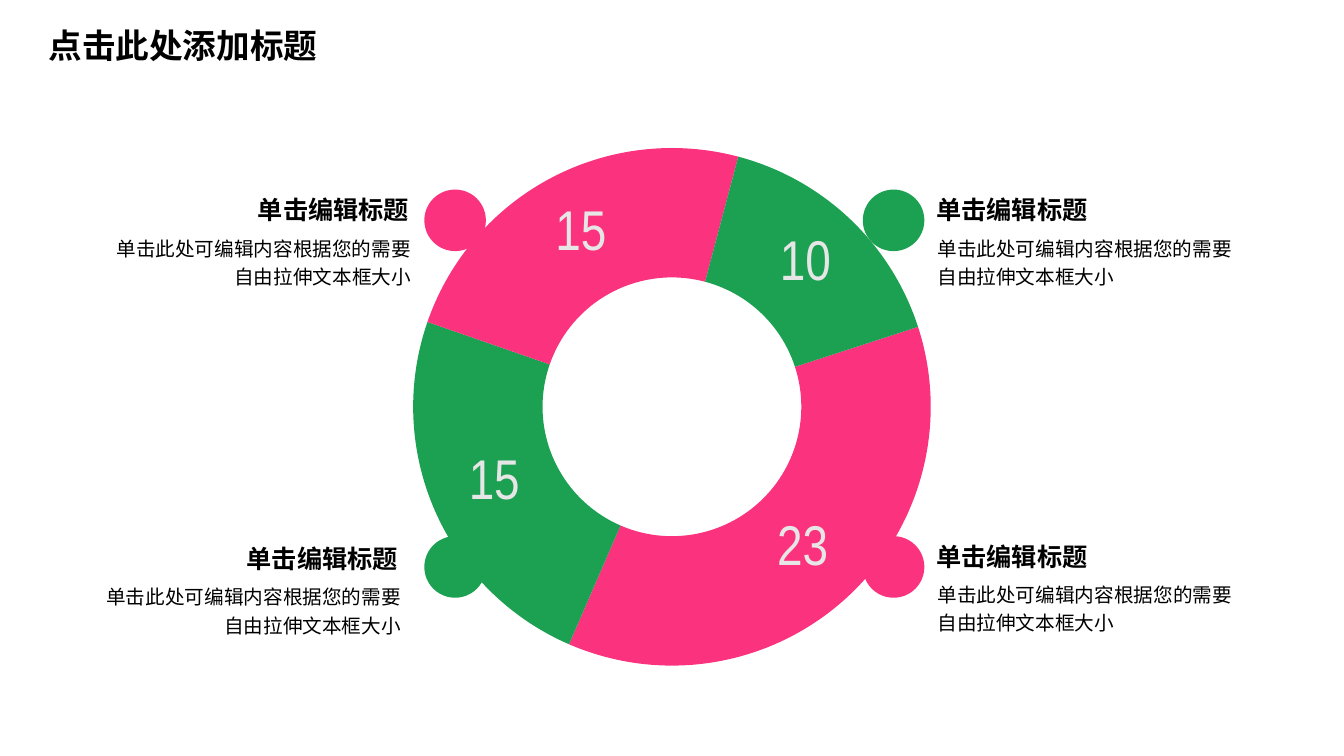
"""Build a slide with a four-part ring chart and a caption beside each part."""
from lxml import etree
from pptx import Presentation
from pptx import util as u
from pptx.chart.data import CategoryChartData
from pptx.dml.color import RGBColor
from pptx.enum import chart as charts, shapes, text
from pptx.oxml.ns import qn

PINK = RGBColor(0xFB, 0x33, 0x7F)
GREEN = RGBColor(0x1B, 0xA1, 0x51)
BLACK = RGBColor(0, 0, 0)
PALE = RGBColor(0xE7, 0xE6, 0xE6)
CJK_FONT = "Noto Sans CJK SC"
LEFT, RIGHT = text.PP_ALIGN.LEFT, text.PP_ALIGN.RIGHT


class RingSlide:
    def __init__(self, slide):
        self.slide = slide

    def add_words(self, frame, words, size, bold=False, align=LEFT):
        frame.word_wrap = True
        frame.vertical_anchor = text.MSO_ANCHOR.TOP
        paragraph = frame.paragraphs[0]
        paragraph.alignment = align
        run = paragraph.add_run()
        run.text = words
        font = run.font
        font.size, font.bold, font.name = u.Pt(size), bold, CJK_FONT
        font.color.rgb = BLACK
        latin = run._r.rPr.find(qn("a:latin"))
        east_asian = etree.Element(qn("a:ea"), typeface=CJK_FONT)
        latin.addnext(east_asian)
        return paragraph

    def title(self, words, x, y, width, height):
        title = self.slide.shapes.title
        title.left, title.top, title.width, title.height = map(u.Pt, (x, y, width, height))
        self.add_words(title.text_frame, words, 24, bold=True)
        title.text_frame.auto_size = text.MSO_AUTO_SIZE.SHAPE_TO_FIT_TEXT

    def heading(self, words, x, y):
        frame = self.slide.shapes.add_textbox(*map(u.Pt, (x, y, 132.5, 29))).text_frame
        self.add_words(frame, words, 18, bold=True)
        frame.auto_size = text.MSO_AUTO_SIZE.SHAPE_TO_FIT_TEXT

    def body(self, words, x, y, width, align):
        frame = self.slide.shapes.add_textbox(*map(u.Pt, (x, y, width, 39.6))).text_frame
        frame.margin_left = frame.margin_right = frame.margin_top = frame.margin_bottom = 0
        paragraph = self.add_words(frame, words, 14, align=align)
        paragraph.line_spacing = 1.2
        paragraph.space_after = u.Pt(6)

    def dot(self, x, y, color):
        dot = self.slide.shapes.add_shape(
            shapes.MSO_SHAPE.OVAL, *map(u.Pt, (x, y, 44, 44)))
        dot.shadow.inherit = False
        dot.fill.solid()
        dot.fill.fore_color.rgb = color
        dot.line.fill.background()

    def ring(self, values, colors, x, y, side):
        data = CategoryChartData()
        data.categories = [str(number) for number in range(1, len(values) + 1)]
        data.add_series("Series 1", values)
        ring = self.slide.shapes.add_chart(
            charts.XL_CHART_TYPE.DOUGHNUT, *map(u.Pt, (x, y, side, side)), data).chart
        ring.has_legend = False
        ring.has_title = False
        ring.font.size, ring.font.name = u.Pt(10), "Calibri"
        ring.font.color.rgb = BLACK
        plot = ring.plots[0]
        plot.vary_by_categories = True
        for index, color in enumerate(colors):
            part = plot.series[0].points[index].format
            part.fill.solid()
            part.fill.fore_color.rgb = color
            part.line.fill.background()
        labels = plot.series[0].data_labels
        labels.show_value = True
        labels.font.size, labels.font.name = u.Pt(40), "Arial Narrow"
        labels.font.color.rgb = PALE
        chart_xml = ring._chartSpace
        for tag, setting in (("c:firstSliceAng", "72"), ("c:holeSize", "55")):
            next(chart_xml.iter(qn(tag))).set("val", setting)


def main():
    deck = Presentation()
    deck.slide_width, deck.slide_height = u.Pt(960), u.Pt(540)
    page = RingSlide(deck.slides.add_slide(deck.slide_layouts[5]))
    page.title("点击此处添加标题", 27.4, 14.4, 272, 36)
    page.ring((23, 15, 15, 10), (PINK, GREEN, PINK, GREEN), 285.2, 95.8, 389.6)

    captions = (
        (616.3, 135.4, GREEN, 661.7, 135.4, 669.6, 220.3, LEFT),
        (616.3, 383, PINK, 661.7, 383, 669.6, 212.4, LEFT),
        (303.1, 383, GREEN, 169.2, 384.5, 69.8, 216.7, RIGHT),
        (303.1, 135.4, PINK, 177.1, 135.4, 69.8, 223.9, RIGHT),
    )
    for dot_x, dot_y, color, *_ in captions:
        page.dot(dot_x, dot_y, color)
    for _, _, _, heading_x, top, body_x, width, align in captions:
        page.heading("单击编辑标题", heading_x, top)
        page.body("单击此处可编辑内容根据您的需要自由拉伸文本框大小",
                  body_x, top + 30.2, width, align)
    deck.save("out.pptx")


if __name__ == "__main__":
    main()
